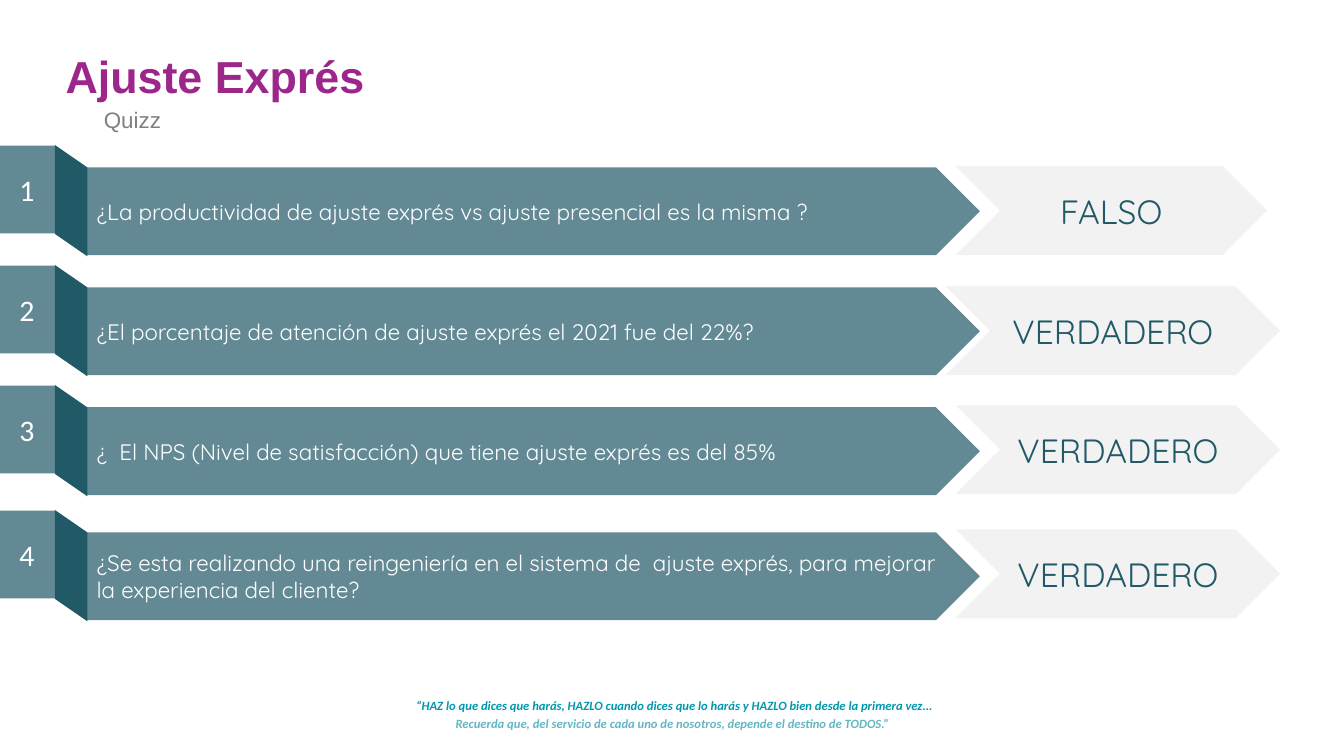
from dataclasses import dataclass
from pptx import Presentation, util as u
from pptx.dml.color import RGBColor
from pptx.enum import shapes, text
from pptx.oxml.ns import qn
from lxml import etree

Pt = u.Pt
Kind = shapes.MSO_SHAPE
Side = text.PP_ALIGN
Hold = text.MSO_ANCHOR


@dataclass(frozen=True)
class Theme:
    teal: str = "215967"
    pale: str = "F2F2F2"
    white: str = "FFFFFF"
    plum: str = "9D268B"
    gray: str = "808080"
    aqua: str = "0098AE"
    mist: str = "64B6C1"
    head: float = 32
    answer: float = 24
    digit: float = 21.3
    body: float = 16
    note: float = 9
    sans: str = "Arial"
    plain: str = "Calibri"
    round: str = "Quicksand"


class Deck:
    def __init__(self, theme):
        self.theme = theme
        self.file = Presentation()
        self.file.slide_width, self.file.slide_height = Pt(960), Pt(540)
        self.slide = self.file.slides.add_slide(self.file.slide_layouts[5])

    def letter(self, shape, words, font, side=Side.LEFT, hold=Hold.MIDDLE, pad=(7.2, 3.6)):
        frame = shape.text_frame
        wide, high = map(Pt, pad)
        form = dict(word_wrap=True, auto_size=text.MSO_AUTO_SIZE.NONE,
                    vertical_anchor=hold, margin_left=wide, margin_right=wide,
                    margin_top=high, margin_bottom=high)
        for key, value in form.items():
            setattr(frame, key, value)
        line = frame.paragraphs[0]
        line.alignment = side
        run = line.add_run()
        run.text = words
        name, size, tint, *marks = font
        look = dict(name=name, size=Pt(size), bold="b" in marks, italic="i" in marks)
        for key, value in look.items():
            setattr(run.font, key, value)
        run.font.color.rgb = RGBColor.from_string(tint)

    def title(self, words, box, font, **form):
        shape = self.slide.shapes.title
        for key, value in zip(("left", "top", "width", "height"), box):
            setattr(shape, key, Pt(value))
        self.letter(shape, words, font, **form)

    def label(self, words, box, font, **form):
        self.letter(self.slide.shapes.add_textbox(*map(Pt, box)), words, font, **form)

    def block(self, kind, box, tint, alpha=100):
        shape = self.slide.shapes.add_shape(kind, *map(Pt, box))
        shape.shadow.inherit = False
        shape.line.fill.background()
        shape.fill.solid()
        shape.fill.fore_color.rgb = RGBColor.from_string(tint)
        if alpha < 100:
            color = shape.element.spPr.find(qn("a:solidFill")).find(qn("a:srgbClr"))
            etree.SubElement(color, qn("a:alpha")).set("val", str(alpha * 1000))
        return shape

    def question(self, digit, words, top):
        t = self.theme
        plate = self.block(Kind.PENTAGON, (61.9, top, 638, 62.8), t.teal, 70)
        self.letter(plate, words, (t.round, t.body, t.white))
        tab = self.block(Kind.RECTANGLE, (-0.7, top - 15.5, 40, 62.8), t.teal, 70)
        self.letter(tab, str(digit), (t.plain, t.digit, t.white), Side.CENTER)
        fold = self.block(Kind.PARALLELOGRAM, (11, top + 12.2, 79.5, 23.2), t.teal)
        fold.rotation = 90
        fold.adjustments[0] = 0.69

    def answer(self, words, left, top, width):
        t = self.theme
        arrow = self.block(Kind.CHEVRON, (left, top, width, 63.4), t.pale)
        self.letter(arrow, words, (t.round, t.answer, t.teal), Side.CENTER)


def main():
    t = Theme()
    deck = Deck(t)
    slim = (3.6, 1.4)
    deck.title("Ajuste Exprés", (43.2, 36, 266.4, 36), (t.sans, t.head, t.plum, "b"), pad=slim)
    deck.label("Quizz", (70.6, 72, 284.4, 26.6), (t.sans, t.body, t.gray), pad=slim)

    quiz = [
        (119.5, "¿La productividad de ajuste exprés vs ajuste presencial es la misma ?",
         "FALSO", 682.6, 118.7, 222.4),
        (205.2, "¿El porcentaje de atención de ajuste exprés el 2021 fue del 22%?",
         "VERDADERO", 675.4, 204.5, 239),
        (290.9, "¿  El NPS (Nivel de satisfacción) que tiene ajuste exprés es del 85%",
         "VERDADERO", 682.6, 289.5, 231.8),
        (380.2, "¿Se esta realizando una reingeniería en el sistema de  ajuste exprés, "
         "para mejorar la experiencia del cliente?",
         "VERDADERO", 682.6, 378.2, 231.8),
    ]
    for digit, (top, words, *_) in enumerate(quiz, 1):
        deck.question(digit, words, top)
    for _, _, *reply in quiz:
        deck.answer(*reply)

    motto = [
        ("“HAZ lo que dices que harás, HAZLO cuando dices que lo harás y HAZLO bien "
         "desde la primera vez...", (289.4, 494.6, 384.5, 15.8), t.aqua),
        ("Recuerda que, del servicio de cada uno de nosotros, depende el destino de TODOS.”",
         (288, 507.6, 384.5, 23.8), t.mist),
    ]
    for words, box, tint in motto:
        deck.label(words, box, (t.plain, t.note, tint, "b", "i"),
                   side=Side.CENTER, hold=Hold.TOP, pad=(3.6, 3.6))

    deck.file.save("out.pptx")


if __name__ == "__main__":
    main()
